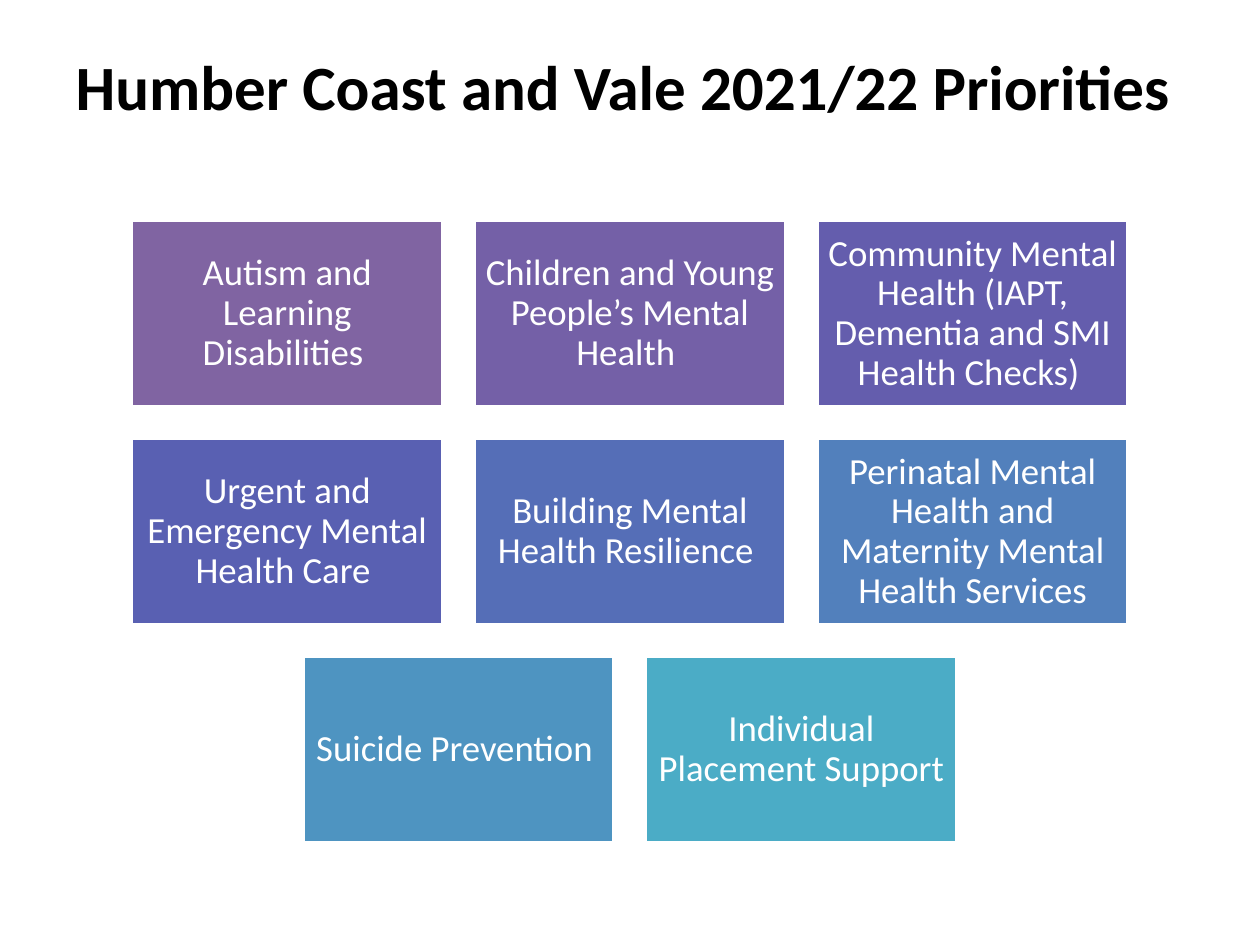
from dataclasses import dataclass

from pptx import Presentation
from pptx.dml.color import RGBColor
from pptx.enum.shapes import MSO_SHAPE
from pptx.enum.text import MSO_ANCHOR, PP_ALIGN
from pptx.slide import Slide
from pptx.text.text import _Paragraph as Paragraph
from pptx.util import Inches, Pt


@dataclass(frozen=True)
class Theme:
    font: str = "Calibri"
    title_size: int = 36
    tile_size: int = 21
    title_color: str = "000000"
    light: str = "FFFFFF"


@dataclass(frozen=True)
class Priority:
    text: str
    fill: str


THEME = Theme()
TITLE = "Humber Coast and Vale 2021/22 Priorities"
PRIORITY_ROWS = [
    [
        Priority("Autism and Learning Disabilities ", "8064A2"),
        Priority("Children and Young People’s Mental Health ", "7460A7"),
        Priority("Community Mental Health (IAPT, Dementia and SMI Health Checks) ", "645DAD"),
    ],
    [
        Priority("Urgent and Emergency Mental Health Care ", "5960B2"),
        Priority("Building Mental Health Resilience ", "556EB7"),
        Priority("Perinatal Mental Health and Maternity Mental Health Services", "5280BC"),
    ],
    [
        Priority("Suicide Prevention ", "4E94C1"),
        Priority("Individual Placement Support ", "4BACC6"),
    ],
]
TILE_WIDTH, TILE_HEIGHT, GAP = 2.47, 1.48, 0.25
GRID_TOP, GRID_CENTER = 1.75, 5.0
TILE_INSET = 0.08


def format_text(para: Paragraph, size: int, color: str, bold: bool = False) -> None:
    para.alignment = PP_ALIGN.CENTER
    for span in para.runs:
        span.font.name = THEME.font
        span.font.size = Pt(size)
        span.font.bold = bold
        span.font.color.rgb = RGBColor.from_string(color)


def add_title(page: Slide) -> None:
    box = page.shapes.title
    box.left, box.top = Inches(0.5), Inches(0.18)
    box.width, box.height = Inches(9), Inches(0.99)
    frame = box.text_frame
    frame.text = TITLE
    frame.vertical_anchor = MSO_ANCHOR.MIDDLE
    frame.margin_left, frame.margin_right = Inches(0.05), Inches(0.16)
    format_text(frame.paragraphs[0], THEME.title_size, THEME.title_color, bold=True)


def add_tile(page: Slide, priority: Priority, left: float, top: float) -> None:
    box = page.shapes.add_shape(
        MSO_SHAPE.RECTANGLE, Inches(left), Inches(top), Inches(TILE_WIDTH), Inches(TILE_HEIGHT)
    )
    box.shadow.inherit = False
    box.fill.solid()
    box.fill.fore_color.rgb = RGBColor.from_string(priority.fill)
    box.line.color.rgb = RGBColor.from_string(THEME.light)
    box.line.width = Pt(2)
    frame = box.text_frame
    frame.text = priority.text
    frame.word_wrap = True
    frame.vertical_anchor = MSO_ANCHOR.MIDDLE
    frame.margin_left = frame.margin_right = Inches(TILE_INSET)
    frame.margin_top = frame.margin_bottom = Inches(TILE_INSET)
    para = frame.paragraphs[0]
    para.line_spacing = 0.9
    format_text(para, THEME.tile_size, THEME.light)


def add_priority_grid(page: Slide) -> None:
    """Draw each row of tiles centred on the page, whatever its length."""
    for row, priorities in enumerate(PRIORITY_ROWS):
        row_width = len(priorities) * (TILE_WIDTH + GAP) - GAP
        row_left = GRID_CENTER - row_width / 2
        top = GRID_TOP + row * (TILE_HEIGHT + GAP)
        for column, priority in enumerate(priorities):
            add_tile(page, priority, row_left + column * (TILE_WIDTH + GAP), top)


def main() -> None:
    deck = Presentation()
    deck.slide_width, deck.slide_height = Inches(10), Inches(7.5)
    page = deck.slides.add_slide(deck.slide_layouts[5])
    add_title(page)
    add_priority_grid(page)
    deck.save("out.pptx")


if __name__ == "__main__":
    main()
